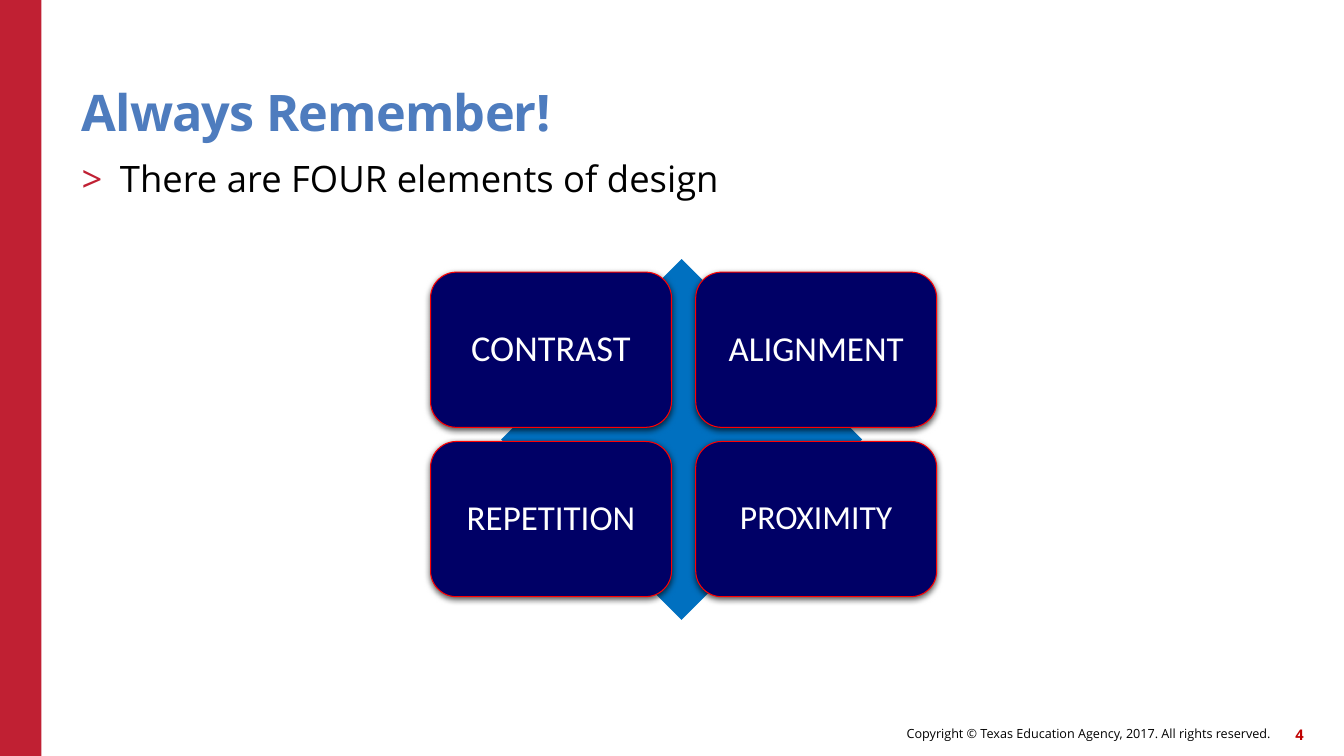
"""Build the slide on the four elements of design."""
from lxml import etree
from pptx import Presentation
from pptx.dml.color import RGBColor
from pptx.enum.shapes import MSO_SHAPE as Preset
from pptx.enum.text import MSO_ANCHOR as Anchor, MSO_AUTO_SIZE as AutoSize, PP_ALIGN as Align
from pptx.oxml import parse_xml
from pptx.oxml.ns import nsdecls, qn
from pptx.util import Inches, Pt


def color(value):
    return RGBColor.from_string(value)


def write(shape, text, anchor, paragraph_format, font_format, inset=0):
    frame = shape.text_frame
    frame_format = {"word_wrap": True, "auto_size": AutoSize.NONE, "vertical_anchor": anchor}
    for side in ("left", "top", "right", "bottom"):
        frame_format[f"margin_{side}"] = Inches(inset)
    for name, value in frame_format.items():
        setattr(frame, name, value)
    paragraph = frame.paragraphs[0]
    for name, value in paragraph_format.items():
        setattr(paragraph, name, value)
    run = paragraph.add_run()
    run.text = text
    for name, value in font_format.items():
        if name == "color":
            run.font.color.rgb = color(value)
        else:
            setattr(run.font, name, value)
    return paragraph


presentation = Presentation()
presentation.slide_width, presentation.slide_height = Inches(13.33), Inches(7.5)
slide = presentation.slides.add_slide(presentation.slide_layouts[1])
shapes = slide.shapes

band = shapes.add_shape(Preset.RECTANGLE, 0, 0, Inches(0.41), presentation.slide_height)
band.shadow.inherit = False
band.fill.solid()
band.fill.fore_color.rgb = color("C02033")
band.line.fill.background()

footers = [
    ((6.14, 7.12, 6.46, 0.32), "Copyright © Texas Education Agency, 2017. All rights reserved.",
     {"size": Pt(9), "color": "000000"}),
    ((12.51, 7.13, 0.42, 0.32), "4", {"size": Pt(10.5), "color": "C00000", "bold": True}),
]
for place, text, font_format in footers:
    footer = shapes.add_textbox(*map(Inches, place))
    write(footer, text, Anchor.MIDDLE, {"alignment": Align.RIGHT},
          {"name": "Open Sans", **font_format})

title, body = shapes.title, slide.placeholders[1]
for placeholder, place in ((title, (0.81, 0.45, 11, 0.96)), (body, (0.81, 1.55, 12.09, 5.18))):
    placeholder.left, placeholder.top, placeholder.width, placeholder.height = map(Inches, place)

heading = write(title, "Always Remember!", Anchor.BOTTOM,
                {"alignment": Align.LEFT, "line_spacing": 0.9},
                {"name": "Open Sans", "size": Pt(36), "bold": True, "color": "4E7CBE"})
heading.runs[0].font._element.set("spc", "-60")

point = write(body, "There are FOUR elements of design", Anchor.TOP,
              {"level": 1, "alignment": Align.LEFT, "space_before": Pt(0)},
              {"name": "Open Sans", "size": Pt(26), "color": "000000"})
properties = point._p.get_or_add_pPr()
properties.set("marL", str(Inches(0.38)))
properties.set("indent", str(-Inches(0.38)))
bullet_color = etree.SubElement(properties, qn("a:buClr"))
etree.SubElement(bullet_color, qn("a:srgbClr"), val="C02033")
etree.SubElement(properties, qn("a:buFont"), typeface="Open Sans")
etree.SubElement(properties, qn("a:buChar"), char=">")

diamond = shapes.add_shape(Preset.DIAMOND, *map(Inches, (4.97, 2.57, 3.58, 3.58)))
diamond.shadow.inherit = False
diamond.fill.solid()
diamond.fill.fore_color.rgb = color("0070C0")
diamond.line.fill.background()

grid_left, grid_top = 4.27, 2.7
column_step, row_step = 2.63, 1.68
elements = [("CONTRAST", 26), ("ALIGNMENT", 25), ("REPETITION", 25), ("PROXIMITY", 24)]
for index, (element, size) in enumerate(elements):
    row, column = divmod(index, 2)
    card = shapes.add_shape(
        Preset.ROUNDED_RECTANGLE, Inches(grid_left + column * column_step),
        Inches(grid_top + row * row_step), Inches(2.39), Inches(1.54))
    card.fill.solid()
    card.fill.fore_color.rgb = color("000066")
    card.line.color.rgb = color("FF0000")
    card.line.width = Pt(0.75)
    card.shadow.inherit = False
    card._element.spPr.find(qn("a:effectLst")).append(parse_xml(
        f'<a:outerShdw {nsdecls("a")} blurRad="{Pt(4.5)}" dist="{Pt(1.5)}" dir="5400000" '
        'rotWithShape="0"><a:srgbClr val="000000"><a:alpha val="63000"/></a:srgbClr>'
        '</a:outerShdw>'))
    write(card, element, Anchor.MIDDLE, {"alignment": Align.CENTER, "line_spacing": 0.9},
          {"name": "Calibri", "size": Pt(size), "color": "FFFFFF"}, inset=0.1)

presentation.save("out.pptx")
